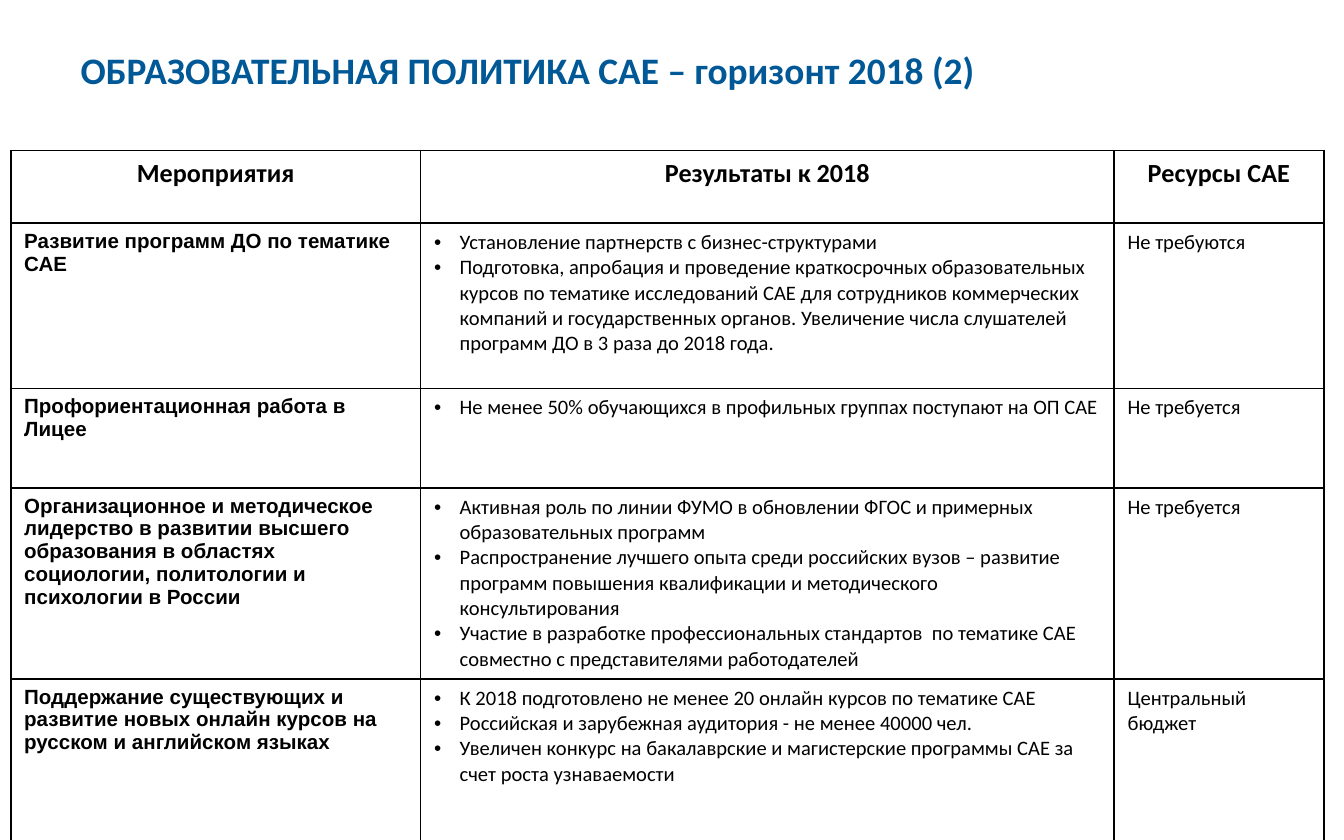
from lxml.etree import SubElement
from pptx import Presentation
from pptx.dml.color import RGBColor
from pptx.enum.text import MSO_ANCHOR, MSO_AUTO_SIZE, PP_ALIGN
from pptx.oxml.ns import qn
from pptx.util import Inches, Pt

BLUE = RGBColor(0x00, 0x59, 0x96)
BLACK = RGBColor(0, 0, 0)

TITLE = "ОБРАЗОВАТЕЛЬНАЯ ПОЛИТИКА САЕ – горизонт 2018 (2)"
HEADINGS = ("Мероприятия", "Результаты к 2018", "Ресурсы САЕ")
ACTIVITIES = [
    ("Развитие программ ДО по тематике САЕ",
     ["Установление партнерств с бизнес-структурами",
      "Подготовка, апробация и проведение краткосрочных образовательных курсов "
      "по тематике исследований САЕ для сотрудников коммерческих компаний и "
      "государственных органов. Увеличение числа слушателей программ ДО в 3 раза "
      "до 2018 года."],
     "Не требуются"),
    ("Профориентационная работа в  Лицее",
     ["Не менее 50% обучающихся в профильных группах поступают на ОП САЕ"],
     "Не требуется"),
    ("Организационное и методическое лидерство в развитии высшего образования "
     "в областях социологии, политологии и психологии в России",
     ["Активная роль по линии ФУМО в обновлении ФГОС и примерных "
      "образовательных программ",
      "Распространение лучшего опыта среди российских вузов – развитие программ "
      "повышения квалификации и методического консультирования",
      "Участие в разработке профессиональных стандартов  по тематике САЕ "
      "совместно с представителями работодателей"],
     "Не требуется"),
    ("Поддержание существующих и развитие новых онлайн курсов на русском и "
     "английском языках",
     ["К 2018 подготовлено не менее 20 онлайн курсов по тематике САЕ",
      "Российская и зарубежная аудитория - не менее 40000 чел.",
      "Увеличен конкурс на бакалаврские и магистерские программы САЕ за счет "
      "роста узнаваемости"],
     "Центральный бюджет"),
]
COLUMN_WIDTHS = (3.05, 5.16, 1.56)
ROW_HEIGHTS = (0.54, 1.23, 0.74, 1.42, 1.32)

TITLE_FONT = {"name": "Calibri", "size": Pt(20), "bold": True}
HEADING_FONT = {"name": "Calibri", "size": Pt(14), "bold": True}
ACTIVITY_FONT = {"name": "Arial", "size": Pt(11), "bold": True}
DETAIL_FONT = {"name": "Calibri", "size": Pt(11), "bold": False}


def format_font(font, values, color):
    for key, value in values.items():
        setattr(font, key, value)
    font.color.rgb = color


def add_bullet(paragraph):
    properties = paragraph._p.get_or_add_pPr()
    properties.set("marL", str(Inches(0.19)))
    properties.set("indent", str(-Inches(0.19)))
    SubElement(properties, qn("a:buFont"), typeface="Arial")
    SubElement(properties, qn("a:buChar"), char="•")


def add_borders(cell):
    properties = cell._tc.get_or_add_tcPr()
    for side in ("lnL", "lnR", "lnT", "lnB"):
        border = SubElement(properties, qn(f"a:{side}"), w=str(Pt(1)))
        fill = SubElement(border, qn("a:solidFill"))
        SubElement(fill, qn("a:srgbClr"), val=str(BLACK))


def fill_cell(cell, lines, values, align=PP_ALIGN.LEFT, bulleted=False):
    add_borders(cell)
    cell.fill.background()
    cell.text = "\n".join(lines)
    for paragraph in cell.text_frame.paragraphs:
        paragraph.alignment = align
        if bulleted:
            add_bullet(paragraph)
        for run in paragraph.runs:
            format_font(run.font, values, BLACK)


deck = Presentation()
deck.slide_width, deck.slide_height = Inches(10), Inches(6.25)
slide = deck.slides.add_slide(deck.slide_layouts[5])

heading = slide.shapes.title
heading.left, heading.top = Inches(0.6), Inches(0.13)
heading.width, heading.height = Inches(8.07), Inches(0.77)
heading.text = TITLE
title_format = {
    "margin_left": 0, "margin_right": 0, "margin_top": 0, "margin_bottom": 0,
    "word_wrap": True, "auto_size": MSO_AUTO_SIZE.NONE,
    "vertical_anchor": MSO_ANCHOR.MIDDLE,
}
for key, value in title_format.items():
    setattr(heading.text_frame, key, value)
title_line = heading.text_frame.paragraphs[0]
title_line.alignment = PP_ALIGN.LEFT
format_font(title_line.runs[0].font, TITLE_FONT, BLUE)

plan = slide.shapes.add_table(
    len(ROW_HEIGHTS), len(COLUMN_WIDTHS), Inches(0.08), Inches(1.12),
    Inches(sum(COLUMN_WIDTHS)), Inches(sum(ROW_HEIGHTS))).table
plan.first_row = plan.horz_banding = False
for column, width in zip(plan.columns, COLUMN_WIDTHS):
    column.width = Inches(width)
for row, height in zip(plan.rows, ROW_HEIGHTS):
    row.height = Inches(height)

for index, label in enumerate(HEADINGS):
    fill_cell(plan.cell(0, index), [label], HEADING_FONT, PP_ALIGN.CENTER)
for index, (activity, results, resource) in enumerate(ACTIVITIES, start=1):
    fill_cell(plan.cell(index, 0), [activity], ACTIVITY_FONT)
    fill_cell(plan.cell(index, 1), results, DETAIL_FONT, bulleted=True)
    fill_cell(plan.cell(index, 2), [resource], DETAIL_FONT)

deck.save("out.pptx")
